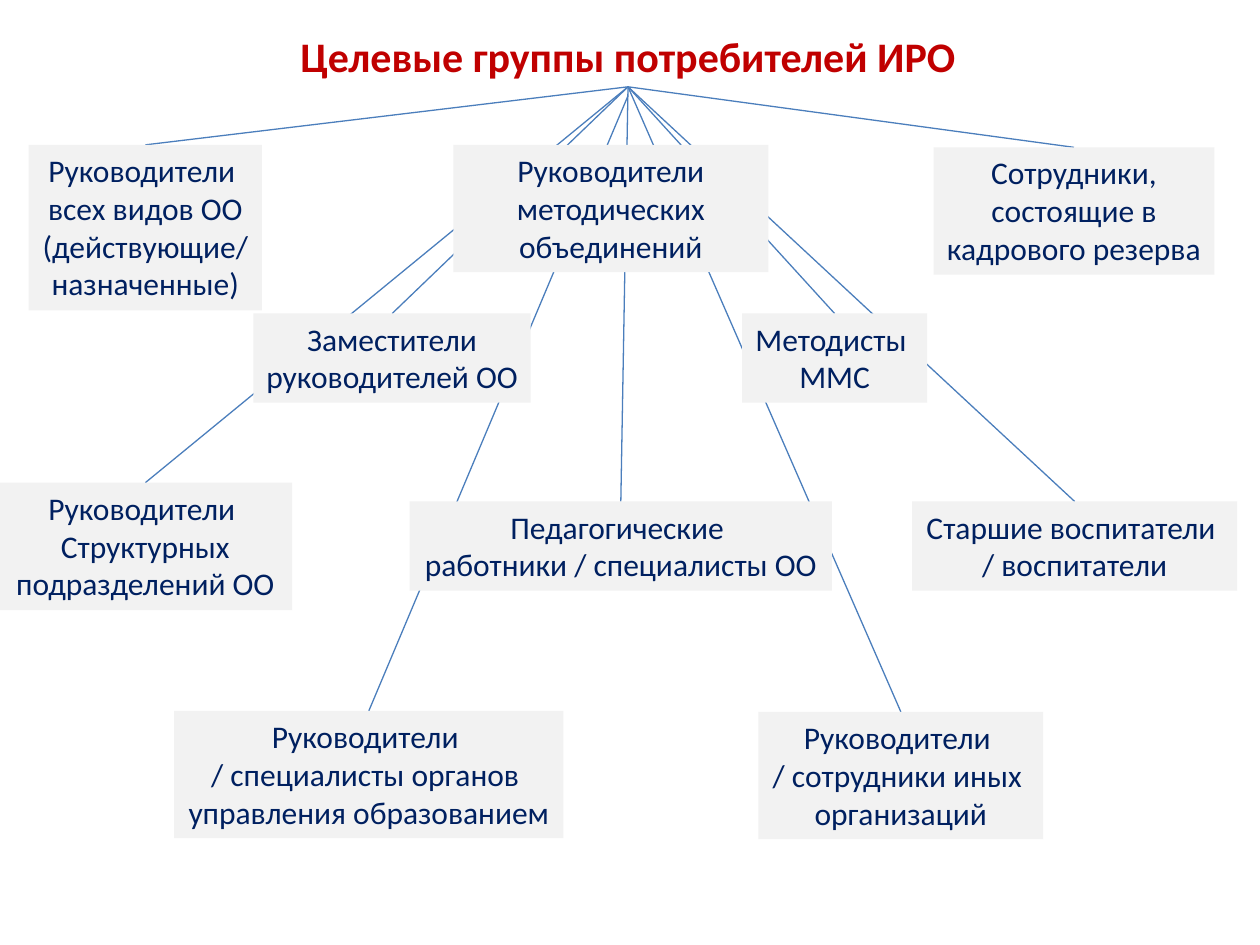
from dataclasses import dataclass

from lxml import etree
from pptx import Presentation
from pptx import util as u
from pptx.dml.color import RGBColor
from pptx.enum import shapes, text
from pptx.oxml.ns import qn


@dataclass(frozen=True)
class Theme:
    font: str = "Calibri"
    head: RGBColor = RGBColor(0xC0, 0x00, 0x00)
    body: RGBColor = RGBColor(0x00, 0x20, 0x60)
    fill: RGBColor = RGBColor(0xF2, 0xF2, 0xF2)
    line: RGBColor = RGBColor(0x4B, 0x7E, 0xBC)
    head_size: int = 24
    body_size: int = 18
    stroke: float = 0.75


@dataclass(frozen=True)
class Group:
    label: str
    left: float
    top: float
    width: float
    rows: int
    wrap: bool = False
    linked: bool = True
    drop: float = 0


THEME = Theme()
GROUPS = [
    Group(" Заместители \nруководителей ОО", 5.11, 6.32, 5.59, 2, wrap=True),
    Group("Руководители \nвсех видов ОО\n(действующие/\nназначенные)", 0.58, 2.92, 4.7, 4),
    Group("Руководители методических объединений", 9.14, 2.92, 6.35, 3,
          wrap=True, linked=False),
    Group("Методисты \nММС", 14.96, 6.32, 3.73, 2),
    Group("Сотрудники, состоящие в\nкадрового резерва", 18.82, 2.97, 5.66, 3, wrap=True),
    Group("Руководители \nСтруктурных\nподразделений ОО", -0.03, 9.73, 5.92, 3),
    Group("Педагогические \nработники / специалисты ОО", 8.26, 10.11, 8.51, 2),
    Group("Старшие воспитатели \n/ воспитатели", 18.39, 10.11, 6.55, 2),
    Group("Руководители \n/ специалисты органов \nуправления образованием",
          3.51, 14.33, 7.85, 3, drop=0.18),
    Group("Руководители \n/ сотрудники иных \nорганизаций", 15.29, 14.35, 5.74, 3),
]


def place(shape, left: float, top: float, width: float, height: float) -> None:
    spots = {"left": left, "top": top, "width": width, "height": height}
    for name, value in spots.items():
        setattr(shape, name, u.Cm(value))


def write(shape, label: str, size: int, color: RGBColor, bold: bool, wrap: bool) -> None:
    frame = shape.text_frame
    frame.text = label
    look = {"word_wrap": wrap, "vertical_anchor": text.MSO_ANCHOR.TOP,
            "auto_size": text.MSO_AUTO_SIZE.SHAPE_TO_FIT_TEXT}
    for name, value in look.items():
        setattr(frame, name, value)
    style = {"name": THEME.font, "size": u.Pt(size), "bold": bold}
    for para in frame.paragraphs:
        para.alignment = text.PP_ALIGN.CENTER
        for run in para.runs:
            for name, value in style.items():
                setattr(run.font, name, value)
            run.font.color.rgb = color


def draw_box(slide, group: Group):
    box = slide.shapes.add_shape(shapes.MSO_SHAPE.RECTANGLE, 0, 0, 0, 0)
    place(box, group.left, group.top, group.width, 0.26 + 0.77 * group.rows)
    box.shadow.inherit = False
    box.fill.solid()
    box.fill.fore_color.rgb = THEME.fill
    box.line.fill.background()
    write(box, group.label, THEME.body_size, THEME.body, False, group.wrap)
    return box


def draw_link(slide, title, box, drop: float) -> None:
    x = title.left + title.width // 2
    y = title.top + title.height + u.Cm(drop)
    link = slide.shapes.add_connector(shapes.MSO_CONNECTOR.STRAIGHT, x, y, x, y)
    if not drop:
        link.begin_connect(title, 2)
    link.end_connect(box, 0)
    link.line.color.rgb = THEME.line
    link.line.width = u.Pt(THEME.stroke)
    etree.SubElement(link._element.spPr, qn("a:effectLst"))
    slide.shapes._spTree.insert(2, link._element)


def main() -> None:
    deck = Presentation()
    deck.slide_width, deck.slide_height = u.Cm(25.4), u.Cm(19.05)
    slide = deck.slides.add_slide(deck.slide_layouts[5])
    title = slide.shapes.title
    place(title, 0.66, 0.48, 24, 1.27)
    write(title, "Целевые группы потребителей ИРО", THEME.head_size, THEME.head, True, True)
    for group in GROUPS:
        box = draw_box(slide, group)
        if group.linked:
            draw_link(slide, title, box, group.drop)
    deck.save("out.pptx")


if __name__ == "__main__":
    main()
